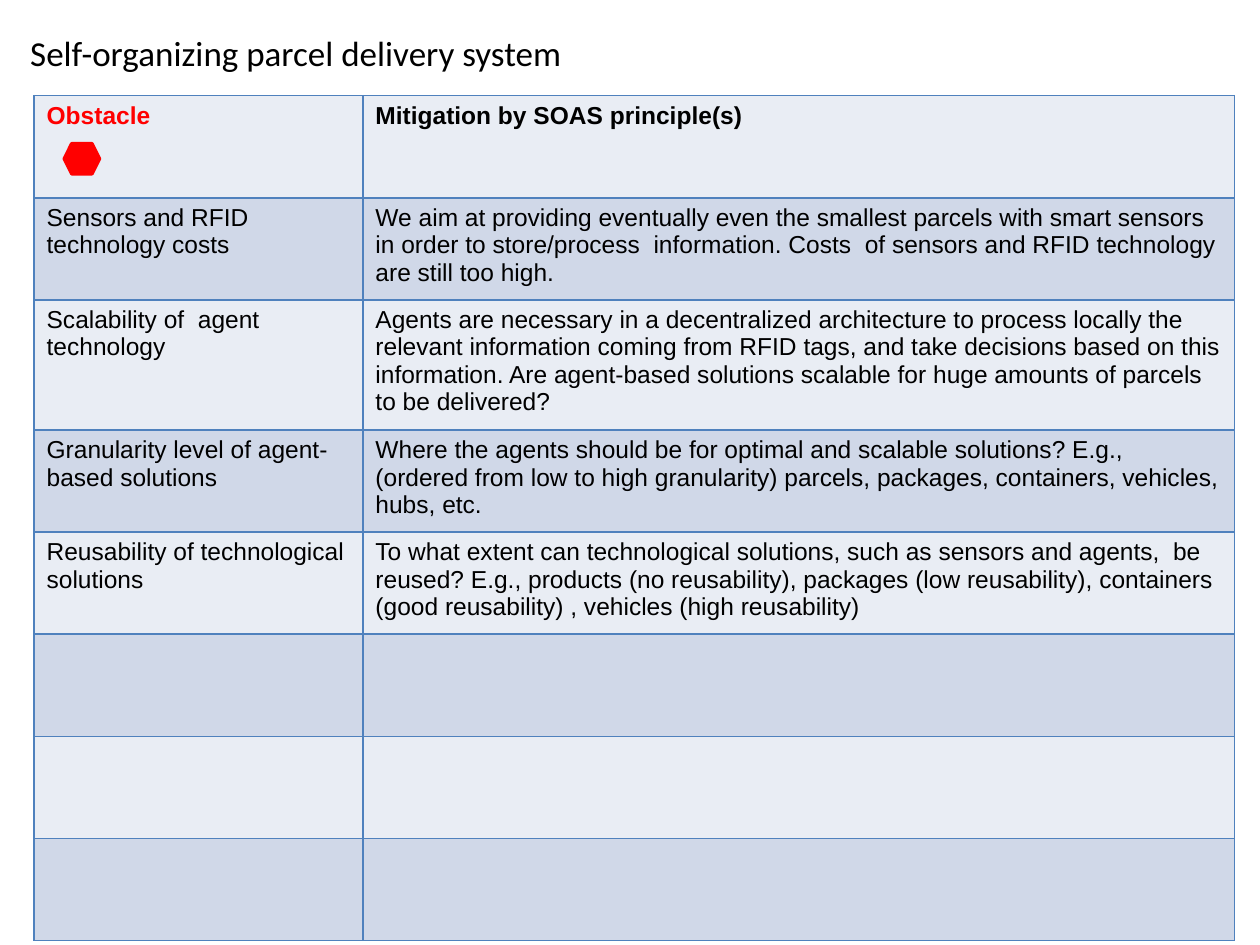
from lxml import etree
from pptx import Presentation
from pptx.dml.color import RGBColor
from pptx.enum.shapes import MSO_SHAPE
from pptx.enum.text import MSO_ANCHOR
from pptx.oxml.ns import qn
from pptx.util import Inches, Pt

HEXAGON = MSO_SHAPE.HEXAGON
MIDDLE = MSO_ANCHOR.MIDDLE

BLACK, RED, BLUE = "000000", "FF0000", "4F81BD"
BANDS = ("E9EDF4", "D0D8E8")
COLUMN_WIDTHS = (2.61, 6.92)
ROW_HEIGHT = 0.81
ROWS = [
    ("Obstacle", "Mitigation by SOAS principle(s)"),
    ("Sensors and RFID technology costs",
     "We aim at providing eventually even the smallest parcels with smart "
     "sensors in order to store/process  information. Costs  of sensors and "
     "RFID technology are still too high."),
    ("Scalability of  agent technology",
     "Agents are necessary in a decentralized architecture to process locally "
     "the relevant information coming from RFID tags, and take decisions based "
     "on this information. Are agent-based solutions scalable for huge amounts "
     "of parcels to be delivered?"),
    ("Granularity level of agent-based solutions",
     "Where the agents should be for optimal and scalable solutions? E.g., "
     "(ordered from low to high granularity) parcels, packages, containers, "
     "vehicles, hubs, etc."),
    ("Reusability of technological solutions",
     "To what extent can technological solutions, such as sensors and agents,  "
     "be reused? E.g., products (no reusability), packages (low reusability), "
     "containers (good reusability) , vehicles (high reusability)"),
] + [("", "")] * 3


def rgb(value):
    return RGBColor.from_string(value)


def set_font(p, name, size, color, bold=False):
    p.font.name = name
    p.font.size = Pt(size)
    p.font.bold = bold
    p.font.color.rgb = rgb(color)


def add_borders(cell, color, width):
    """Outline a cell; call before filling it, as the schema puts lines first."""
    tcPr = cell._tc.get_or_add_tcPr()
    for side in ("a:lnL", "a:lnR", "a:lnT", "a:lnB"):
        ln = etree.SubElement(tcPr, qn(side), w=str(Pt(width)))
        fill = etree.SubElement(ln, qn("a:solidFill"))
        etree.SubElement(fill, qn("a:srgbClr"), val=color)


def add_title(s, left, top, width, height):
    box = s.shapes.add_textbox(Inches(left), Inches(top), Inches(width), Inches(height))
    tf = box.text_frame
    tf.word_wrap = True
    tf.vertical_anchor = MIDDLE
    tf.margin_left = tf.margin_right = tf.margin_top = tf.margin_bottom = Inches(0.04)
    p = tf.paragraphs[0]
    p.text = "Self-organizing parcel delivery system"
    set_font(p, "Calibri", 20, BLACK)


def add_obstacle_table(s, left, top):
    # Grid
    table = s.shapes.add_table(
        len(ROWS), len(COLUMN_WIDTHS), Inches(left), Inches(top),
        Inches(sum(COLUMN_WIDTHS)), Inches(ROW_HEIGHT * len(ROWS))).table
    for column, width in zip(table.columns, COLUMN_WIDTHS):
        column.width = Inches(width)

    # Cells
    for i, texts in enumerate(ROWS):
        table.rows[i].height = Inches(ROW_HEIGHT)
        for j, text in enumerate(texts):
            cell = table.cell(i, j)
            add_borders(cell, BLUE, 1)
            cell.fill.solid()
            cell.fill.fore_color.rgb = rgb(BANDS[i % 2])
            p = cell.text_frame.paragraphs[0]
            p.text = text
            set_font(p, "Arial", 14, RED if i == j == 0 else BLACK, bold=i == 0)

    # Stop sign in the first heading
    sign = s.shapes.add_shape(HEXAGON, Inches(left + 0.24), Inches(top + 0.38),
                              Inches(0.28), Inches(0.24))
    sign.shadow.inherit = False
    sign.fill.solid()
    sign.fill.fore_color.rgb = rgb(RED)
    sign.line.color.rgb = rgb(RED)
    sign.line.width = Pt(2)


def main():
    prs = Presentation()
    prs.slide_width, prs.slide_height = Inches(10), Inches(7.5)
    s = prs.slides.add_slide(prs.slide_layouts[6])
    add_title(s, 0.2, 0.21, 9, 0.42)
    add_obstacle_table(s, 0.27, 0.76)
    prs.save("out.pptx")


if __name__ == "__main__":
    main()
